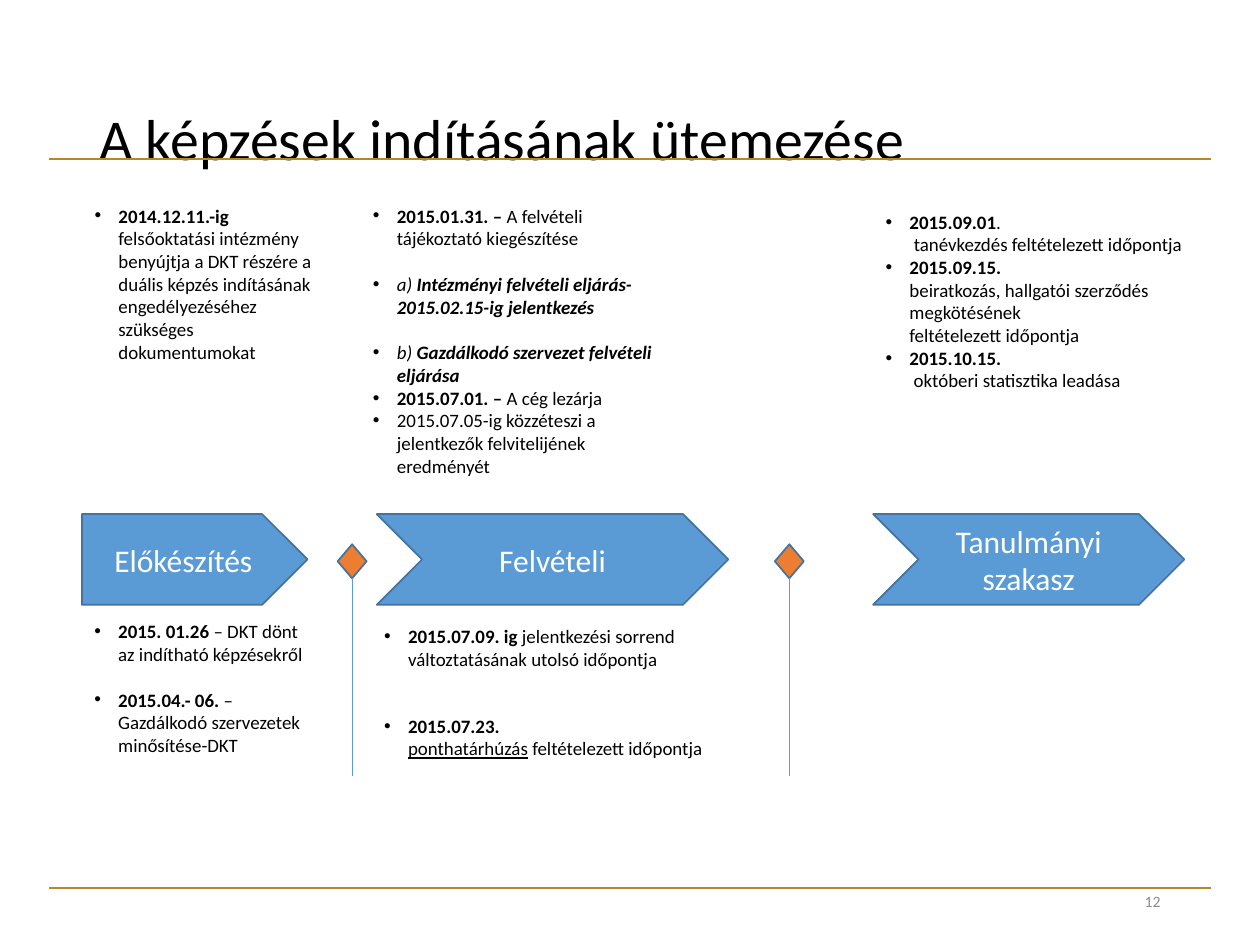
from typing import NamedTuple

from lxml import etree
from pptx import Presentation
from pptx import util as u
from pptx.dml.color import RGBColor
from pptx.enum import shapes, text
from pptx.oxml import ns

FONT = "Calibri"
BLACK, WHITE, GREY = "000000", "FFFFFF", "8C8C8C"
GOLD, BLUE, EDGE, ORANGE = "B78727", "5B9BD5", "43739E", "ED7D31"
SIZE = 10.8
GAP = 13.2
DENT = 0.19
ROW, TALL = 4.08, 0.72
KIND = shapes.MSO_SHAPE


class Run(NamedTuple):
    words: str
    style: str = ""


class Item(NamedTuple):
    runs: list[Run]
    gap: float = 0


class Notes(NamedTuple):
    left: float
    top: float
    width: float
    height: float
    items: list[Item]


class Stage(NamedTuple):
    kind: shapes.MSO_SHAPE
    left: float
    width: float
    label: str


RULES = [1.26, 7.05]

STAGES = [
    Stage(KIND.PENTAGON, 0.65, 1.79, "Előkészítés"),
    Stage(KIND.CHEVRON, 2.99, 2.79, "Felvételi"),
    Stage(KIND.CHEVRON, 6.93, 2.47, "Tanulmányi szakasz"),
]

MARKS = [2.68, 6.15]

NOTES = [
    Notes(0.65, 1.57, 1.93, 1.6, [
        Item([Run("2014.12.11.-ig\n", "b"),
              Run("felsőoktatási intézmény benyújtja a DKT részére a duális képzés "
                  "indításának engedélyezéséhez szükséges dokumentumokat")]),
    ]),
    Notes(2.86, 1.57, 2.47, 2.32, [
        Item([Run("2015.01.31. – ", "b"), Run("A felvételi tájékoztató kiegészítése")]),
        Item([Run("a) ", "i"),
              Run("Intézményi felvételi eljárás- 2015.02.15-ig jelentkezés", "bi")], GAP),
        Item([Run("b) ", "i"), Run("Gazdálkodó szervezet felvételi eljárása", "bi")], GAP),
        Item([Run("2015.07.01. – ", "b"), Run("A cég lezárja")]),
        Item([Run("2015.07.05-ig közzéteszi a jelentkezők felvitelijének eredményét")]),
    ]),
    Notes(6.93, 1.62, 3.07, 1.59, [
        Item([Run("2015.09.01", "b"), Run(".\n tanévkezdés feltételezett időpontja")]),
        Item([Run("2015.09.15.\n", "b"),
              Run("beiratkozás, hallgatói szerződés megkötésének\nfeltételezett időpontja")]),
        Item([Run("2015.10.15.\n ", "b"), Run("októberi statisztika leadása")]),
    ]),
    Notes(0.65, 4.87, 1.93, 1.2, [
        Item([Run("2015. 01.26 ", "b"), Run("– DKT dönt az indítható képzésekről")]),
        Item([Run("2015.04.- 06.", "b"),
              Run(" – Gazdálkodó szervezetek minősítése-DKT")], GAP),
    ]),
    Notes(2.95, 4.91, 2.93, 0.47, [
        Item([Run("2015.07.09. ig ", "b"),
              Run("jelentkezési sorrend változtatásának utolsó időpontja")]),
    ]),
    Notes(2.95, 5.62, 5, 0.47, [
        Item([Run("2015.07.23.\n", "b"), Run("ponthatárhúzás", "u"),
              Run(" feltételezett időpontja")]),
    ]),
]


def tint(code: str) -> RGBColor:
    return RGBColor.from_string(code)


def place(shape, left: float, top: float, width: float, height: float) -> None:
    shape.left, shape.top = u.Inches(left), u.Inches(top)
    shape.width, shape.height = u.Inches(width), u.Inches(height)


def write(para, run: Run, size: float, color: str) -> None:
    for n, part in enumerate(run.words.split("\n")):
        if n:
            para.add_line_break()
        if not part:
            continue
        piece = para.add_run()
        piece.text = part
        font = piece.font
        font.name, font.size = FONT, u.Pt(size)
        font.color.rgb = tint(color)
        font.bold, font.italic = "b" in run.style, "i" in run.style
        font.underline = "u" in run.style


def setup(frame, anchor) -> None:
    frame.word_wrap = True
    frame.auto_size = text.MSO_AUTO_SIZE.NONE
    frame.vertical_anchor = anchor


def bullet(para) -> None:
    props = para._p.get_or_add_pPr()
    props.set("marL", str(u.Inches(DENT)))
    props.set("indent", str(-u.Inches(DENT)))
    face = etree.SubElement(props, ns.qn("a:buFont"))
    face.set("typeface", "Arial")
    mark = etree.SubElement(props, ns.qn("a:buChar"))
    mark.set("char", "•")


def draw_line(slide, start: tuple, end: tuple, color: str, width: float):
    points = [u.Inches(n) for n in (*start, *end)]
    line = slide.shapes.add_connector(shapes.MSO_CONNECTOR.STRAIGHT, *points)
    line.line.color.rgb = tint(color)
    line.line.width = u.Pt(width)
    etree.SubElement(line._element.spPr, ns.qn("a:effectLst"))
    return line


def draw_shape(slide, kind, box: tuple, fill: str):
    shape = slide.shapes.add_shape(kind, *[u.Inches(n) for n in box])
    shape.shadow.inherit = False
    shape.fill.solid()
    shape.fill.fore_color.rgb = tint(fill)
    shape.line.color.rgb = tint(EDGE)
    shape.line.width = u.Pt(1)
    return shape


def draw_stage(slide, stage: Stage) -> None:
    shape = draw_shape(slide, stage.kind, (stage.left, ROW, stage.width, TALL), BLUE)
    setup(shape.text_frame, text.MSO_ANCHOR.MIDDLE)
    para = shape.text_frame.paragraphs[0]
    para.alignment = text.PP_ALIGN.CENTER
    write(para, Run(stage.label), 18, WHITE)


def draw_mark(slide, left: float) -> None:
    gem = draw_shape(slide, KIND.DIAMOND, (left, 4.32, 0.23, 0.27), ORANGE)
    mid = left + 0.115
    line = draw_line(slide, (mid, 4.59), (mid, 6.16), BLUE, 0.5)
    line.begin_connect(gem, 2)


def fill_notes(box, notes: Notes) -> None:
    place(box, *notes[:4])
    frame = box.text_frame
    setup(frame, text.MSO_ANCHOR.TOP)
    for n, item in enumerate(notes.items):
        para = frame.add_paragraph() if n else frame.paragraphs[0]
        para.space_before = u.Pt(item.gap)
        bullet(para)
        para.font.size = u.Pt(SIZE)
        for run in item.runs:
            write(para, run, SIZE, BLACK)


def main() -> None:
    deck = Presentation()
    deck.slide_width, deck.slide_height = u.Inches(10), u.Inches(7.5)
    slide = deck.slides.add_slide(deck.slide_layouts[3])
    title, *bodies = slide.placeholders

    for y in RULES:
        draw_line(slide, (0.39, y), (9.61, y), GOLD, 1)

    place(title, 0.69, 0.4, 8.62, 1.45)
    setup(title.text_frame, text.MSO_ANCHOR.MIDDLE)
    head = title.text_frame.paragraphs[0]
    head.alignment, head.line_spacing = text.PP_ALIGN.LEFT, 0.9
    write(head, Run("A képzések indításának ütemezése"), 33, BLACK)

    for stage in STAGES:
        draw_stage(slide, stage)
    for left in MARKS:
        draw_mark(slide, left)
    for n, notes in enumerate(NOTES):
        box = bodies[n] if n < len(bodies) else slide.shapes.add_textbox(0, 0, 0, 0)
        fill_notes(box, notes)

    page = slide.shapes.add_textbox(0, 0, 0, 0)
    place(page, 7.06, 6.95, 2.25, 0.4)
    setup(page.text_frame, text.MSO_ANCHOR.MIDDLE)
    foot = page.text_frame.paragraphs[0]
    foot.alignment = text.PP_ALIGN.RIGHT
    write(foot, Run("12"), 9, GREY)

    deck.save("out.pptx")


if __name__ == "__main__":
    main()
